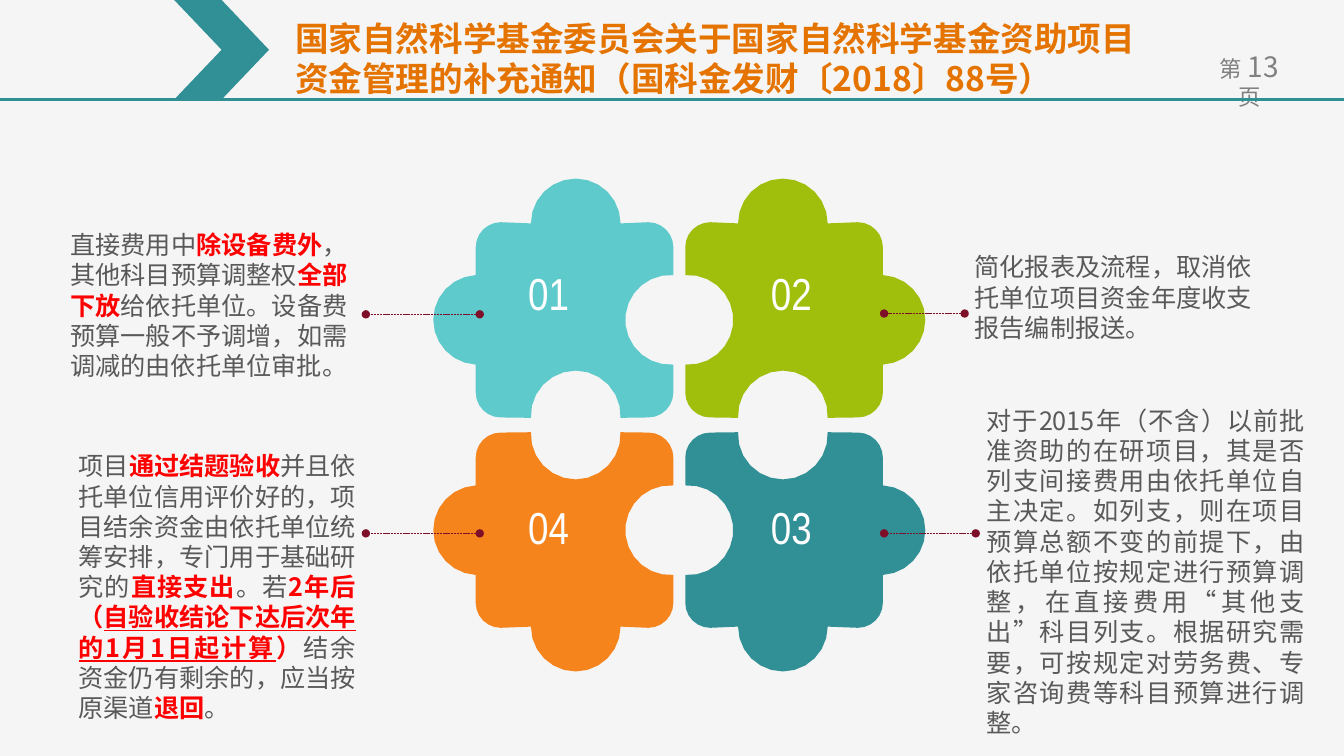
from math import cos, radians, sin

from lxml.etree import SubElement
from pptx import Presentation
from pptx.dml.color import RGBColor
from pptx.enum.dml import MSO_LINE_DASH_STYLE as DASH
from pptx.enum.shapes import MSO_CONNECTOR, MSO_SHAPE
from pptx.enum.text import PP_ALIGN
from pptx.oxml.ns import qn
from pptx.util import Cm, Pt

TEAL = RGBColor(0x31, 0x90, 0x95)
AQUA = RGBColor(0x5F, 0xCA, 0xCB)
GREEN = RGBColor(0xA0, 0xBF, 0x0D)
ORANGE = RGBColor(0xF5, 0x84, 0x1C)
TITLE_ORANGE = RGBColor(0xE5, 0x73, 0x00)
WINE = RGBColor(0x7D, 0x0F, 0x29)
RED = RGBColor(0xFF, 0x00, 0x00)
DARK = RGBColor(0x59, 0x59, 0x59)
GREY = RGBColor(0x80, 0x80, 0x80)
WHITE = RGBColor(0xFF, 0xFF, 0xFF)
PALE = RGBColor(0xF5, 0xF5, 0xF5)
CJK, NARROW = "Noto Sans CJK SC", "Arial Narrow"

# Run formats
HEADING = dict(name=CJK, size=Pt(24), color=TITLE_ORANGE, bold=True)
BODY = dict(name=CJK, size=Pt(18), color=DARK)
KEY = dict(BODY, color=RED, bold=True)
KEY_LINE = dict(KEY, underline=True)
NUMBER = dict(name=NARROW, size=Pt(32), color=WHITE)
PAGE = dict(name=CJK, size=Pt(16), color=GREY)
PAGE_GAP = dict(PAGE, size=Pt(18))
PAGE_NO = dict(PAGE, size=Pt(20))

TITLE = [("国家自然科学基金委员会关于国家自然科学基金资助项目"
          "资金管理的补充通知（国科金发财〔2018〕88号）", HEADING)]
PAGE_LABEL = [("第", PAGE), (" ", PAGE_GAP), ("13", PAGE_NO),
              (" ", PAGE_GAP), ("页", PAGE)]

# number, fill, column, row, number left
PIECES = [("01", AQUA, 0, 0, 13.06), ("02", GREEN, 1, 0, 19.18),
          ("03", TEAL, 1, 1, 19.18), ("04", ORANGE, 0, 1, 13.06)]

# text box (left, top, width, height), leader (from x, to x, y), runs
NOTES = [
    ((1.52, 5.66, 7.49, 4.09), (12.09, 9.22, 7.92), [
        ("直接费用中", BODY), ("除设备费外", KEY),
        ("，其他科目预算调整权", BODY), ("全部下放", KEY),
        ("给依托单位。设备费预算一般不予调增，如需调减的由依托单位审批。", BODY)]),
    ((24.31, 6.22, 7.49, 2.57), (24.31, 22.28, 7.9), [
        ("简化报表及流程，取消依托单位项目资金年度收支报告编制报送。", BODY)]),
    ((24.61, 10.08, 8.53, 7.95), (24.59, 22.28, 13.44), [
        ("对于2015年（不含）以前批准资助的在研项目，其是否列支间接费用由依托单位"
         "自主决定。如列支，则在项目预算总额不变的前提下，由依托单位按规定进行预算"
         "调整，在直接费用“其他支出”科目列支。根据研究需要，可按规定对劳务费、"
         "专家咨询费等科目预算进行调整。", BODY)]),
    ((1.73, 11.23, 7.49, 7.19), (12.09, 9.22, 13.44), [
        ("项目", BODY), ("通过结题验收", KEY),
        ("并且依托单位信用评价好的，项目结余资金由依托单位统筹安排，"
         "专门用于基础研究的", BODY),
        ("直接支出", KEY), ("。若", BODY), ("2年后（", KEY),
        ("自验收结论下达后次年的1月1日起计算", KEY_LINE), ("）", KEY),
        ("结余资金仍有剩余的，应当按原渠道", BODY), ("退回", KEY), ("。", BODY)]),
]

# Puzzle piece in cm: the body runs from (LEFT, TOP) to (WIDE, HIGH)
WIDE, HIGH, LEFT, TOP = 6.05, 6.02, 1.07, 1.1
CORNER, KNOB = 0.63, 1.13
MID_X, MID_Y, SOCKET = 3.59, 3.56, 5.97
COLUMNS, ROWS = (10.92, 17.27), (4.5, 10.9)
NUMBER_TOPS = (6.58, 12.47)
# centre x, centre y, radius, start angle, end angle
ARCS = [
    (MID_X, KNOB, KNOB, 180, 360),
    (WIDE - CORNER, TOP + CORNER, CORNER, 270, 360),
    (SOCKET, MID_Y, KNOB, 274, 86),
    (WIDE - CORNER, HIGH - CORNER, CORNER, 0, 90),
    (MID_X, SOCKET, KNOB, 3, -183),
    (LEFT + CORNER, HIGH - CORNER, CORNER, 90, 180),
    (KNOB, MID_Y, KNOB, 93, 267),
    (LEFT + CORNER, TOP + CORNER, CORNER, 180, 270),
]
ARC_STEP = 15  # degrees


def add_text(s, box, runs, align=PP_ALIGN.LEFT, spacing=None, side=0.25):
    tf = s.shapes.add_textbox(*map(Cm, box)).text_frame
    tf.word_wrap = True
    tf.margin_left = tf.margin_right = Cm(side)
    p = tf.paragraphs[0]
    p.alignment, p.line_spacing = align, spacing
    for text, style in runs:
        r = p.add_run()
        r.text = text
        for key, value in style.items():
            if key == "color":
                r.font.color.rgb = value
            else:
                setattr(r.font, key, value)
        ea = SubElement(r.font._element, qn("a:ea"))
        ea.set("typeface", style["name"])


def add_line(s, x1, y1, x2, y2, color, width):
    line = s.shapes.add_connector(MSO_CONNECTOR.STRAIGHT,
                                  *map(Cm, (x1, y1, x2, y2)))
    line.line.color.rgb, line.line.width = color, Pt(width)
    SubElement(line._element.spPr, qn("a:effectLst"))
    return line


def add_leader(s, x1, x2, y):
    """Dotted line with a round dot at each end."""
    leader = add_line(s, x1, y, x2, y, WINE, 0.5)
    leader.line.dash_style = DASH.SQUARE_DOT
    ln = leader.line._get_or_add_ln()
    for end in ("a:headEnd", "a:tailEnd"):
        SubElement(ln, qn(end)).set("type", "oval")


def paint(sp, color):
    sp.shadow.inherit = False
    sp.fill.solid()
    sp.fill.fore_color.rgb = color
    sp.line.fill.background()


def add_piece(s, column, row, color):
    """Puzzle piece, mirrored in the right column and the bottom row."""
    points = []
    for cx, cy, radius, start, end in ARCS:
        steps = round(abs(end - start) / ARC_STEP)
        for i in range(steps + 1):
            angle = radians(start + (end - start) * i / steps)
            x, y = cx + radius * cos(angle), cy + radius * sin(angle)
            points.append((Cm(COLUMNS[column] + (WIDE - x if column else x)),
                           Cm(ROWS[row] + (HIGH - y if row else y))))
    outline = s.shapes.build_freeform(*points[0])
    outline.add_line_segments(points[1:], close=True)
    paint(outline.convert_to_shape(), color)


def main():
    prs = Presentation()
    prs.slide_width, prs.slide_height = Cm(33.87), Cm(19.05)
    s = prs.slides.add_slide(prs.slide_layouts[6])
    s.background.fill.solid()
    s.background.fill.fore_color.rgb = PALE

    add_text(s, (30, 1.12, 2.97, 1.12), PAGE_LABEL, PP_ALIGN.CENTER, side=0.5)
    add_line(s, 0, 2.51, 33.87, 2.51, TEAL, 2.25)
    add_text(s, (7.19, 0.33, 22.2, 2.31), TITLE, spacing=Pt(28.8))
    paint(s.shapes.add_shape(MSO_SHAPE.CHEVRON, Cm(4.39), 0, Cm(2.39), Cm(2.51)),
          TEAL)

    for number, color, column, row, left in PIECES:
        add_piece(s, column, row, color)
        add_text(s, (left, NUMBER_TOPS[row], 2.4, 2.31), [(number, NUMBER)])
    for box, leader, runs in NOTES:
        add_leader(s, *leader)
        add_text(s, box, runs, PP_ALIGN.JUSTIFY, Pt(21.6))
    prs.save("out.pptx")


if __name__ == "__main__":
    main()
